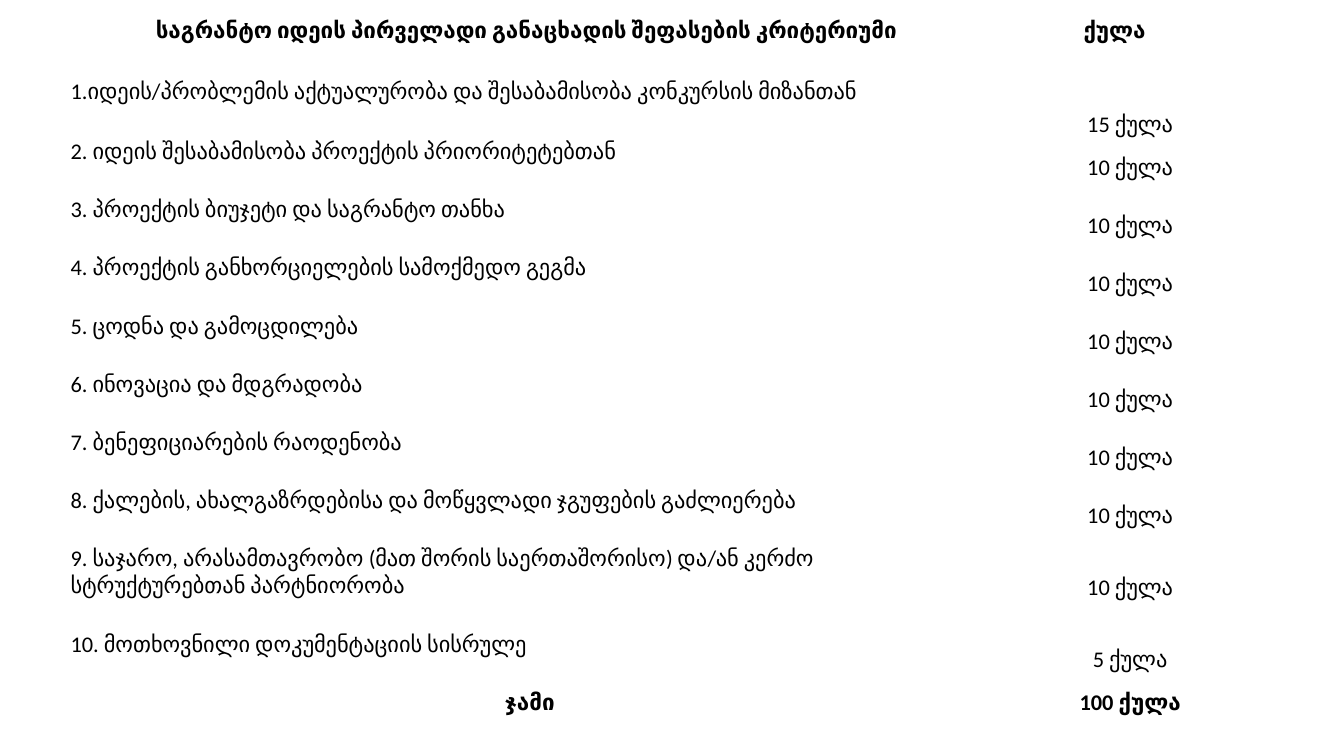
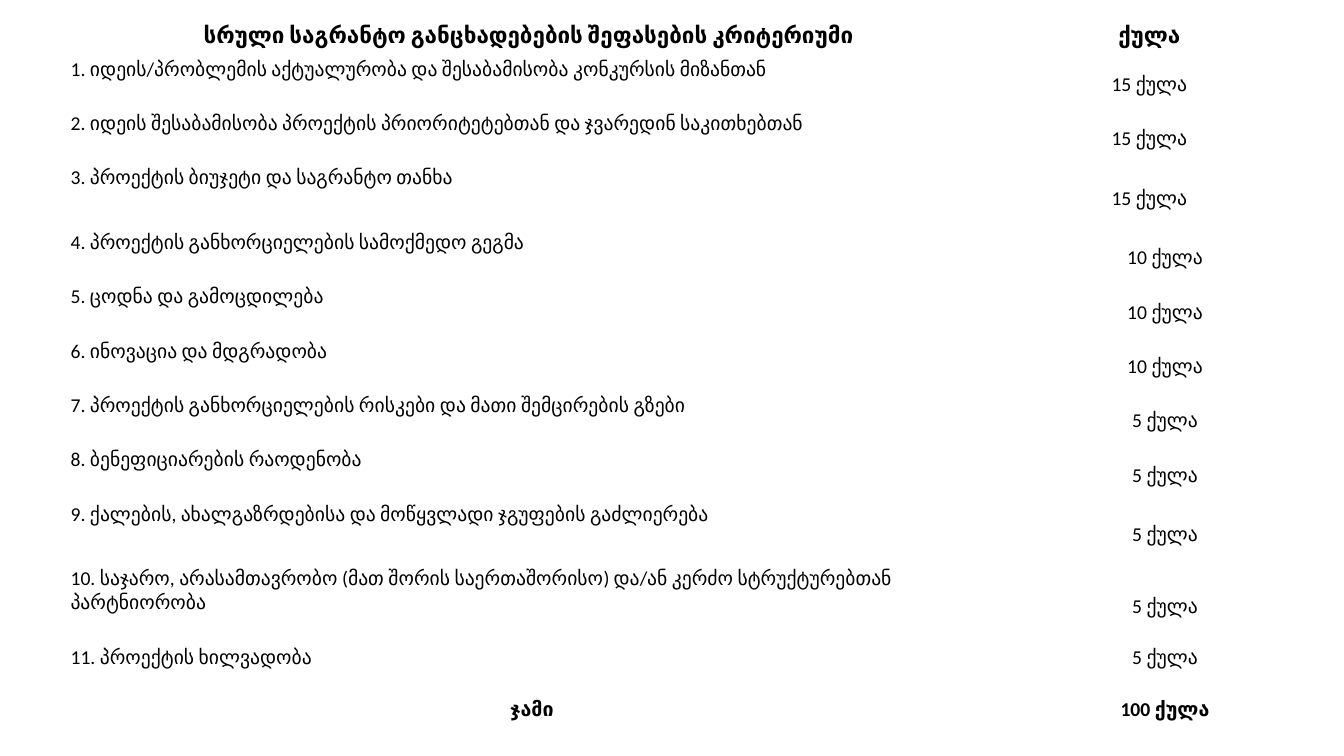
from pptx import Presentation
from pptx.dml.color import RGBColor
from pptx.enum.text import MSO_ANCHOR as Anchor, PP_ALIGN as Align
from pptx.util import Inches, Pt


def color(value):
    return RGBColor.from_string(value)


class ScoreDeck:
    GRID = 100
    BASE_FONT = {"name": "Calibri", "bold": False}
    INK = "000000"
    PAPER = "FFFFFF"
    SIDE_INSET = Inches(0.07)
    SCORE_INDENT = Inches(0.31)
    TOTAL_INDENT = Inches(0.06)

    def __init__(self):
        self.deck = Presentation()
        self.deck.slide_width = Inches(13.33)
        self.deck.slide_height = Inches(7.5)
        self.page = None

    def columns(self, count):
        return round(self.deck.slide_width * count / self.GRID)

    def rows(self, count):
        return round(self.deck.slide_height * count / self.GRID)

    def add_page(self):
        self.page = self.deck.slides.add_slide(self.deck.slide_layouts[6])
        fill = self.page.background.fill
        fill.solid()
        fill.fore_color.rgb = color(self.PAPER)

    def set_cell(self, cell, text, size, align=Align.CENTER, anchor=Anchor.TOP,
                 indent=0, **font):
        cell.fill.background()
        layout = {
            "margin_left": self.SIDE_INSET,
            "margin_right": self.SIDE_INSET,
            "margin_top": 0,
            "margin_bottom": 0,
            "vertical_anchor": anchor,
        }
        for name, value in layout.items():
            setattr(cell, name, value)
        para = cell.text_frame.paragraphs[0]
        para.alignment = align
        if indent:
            para._p.get_or_add_pPr().set("marL", str(indent))
        span = para.add_run()
        span.text = text
        for name, value in {**self.BASE_FONT, "size": Pt(size), **font}.items():
            setattr(span.font, name, value)
        span.font.color.rgb = color(self.INK)

    def add_scores(self, heading, criteria, top, widths, heights, size,
                   centered=(), anchors=None):
        anchors = anchors or {}
        frame = self.page.shapes.add_table(
            len(heights), len(widths), self.columns(4.73), self.rows(top),
            self.columns(sum(widths)), self.rows(sum(heights)))
        table = frame.table
        table.first_row = table.horz_banding = False
        for column, width in zip(table.columns, widths):
            column.width = self.columns(width)
        for row, height in zip(table.rows, heights):
            row.height = self.rows(height)

        for index, text in enumerate((heading, "ქულა")):
            self.set_cell(table.cell(0, index), text, 16, bold=True)
        for number, (text, score) in enumerate(criteria, 1):
            self.set_cell(table.cell(number, 0), text, size, align=Align.LEFT)
            self.set_cell(table.cell(number, 1), f"{score} ქულა", size,
                          anchor=anchors.get(number, Anchor.MIDDLE),
                          indent=0 if number in centered else self.SCORE_INDENT)
        last = len(criteria) + 1
        total = sum(score for _, score in criteria)
        self.set_cell(table.cell(last, 0), "ჯამი", size,
                      indent=self.TOTAL_INDENT, bold=True)
        self.set_cell(table.cell(last, 1), f"{total} ქულა", size,
                      indent=self.SCORE_INDENT, bold=True)


IDEA_CRITERIA = [
    ("1.იდეის/პრობლემის აქტუალურობა და შესაბამისობა კონკურსის მიზანთან", 15),
    ("2. იდეის შესაბამისობა პროექტის პრიორიტეტებთან", 10),
    ("3. პროექტის ბიუჯეტი და საგრანტო თანხა", 10),
    ("4. პროექტის განხორციელების სამოქმედო გეგმა", 10),
    ("5. ცოდნა და გამოცდილება", 10),
    ("6. ინოვაცია და მდგრადობა", 10),
    ("7. ბენეფიციარების რაოდენობა", 10),
    ("8. ქალების, ახალგაზრდებისა და მოწყვლადი ჯგუფების გაძლიერება", 10),
    ("9. საჯარო, არასამთავრობო (მათ შორის საერთაშორისო) და/ან კერძო "
     "სტრუქტურებთან პარტნიორობა", 10),
    ("10. მოთხოვნილი დოკუმენტაციის სისრულე", 5),
]

FULL_CRITERIA = [
    ("1. იდეის/პრობლემის აქტუალურობა და შესაბამისობა კონკურსის მიზანთან", 15),
    ("2. იდეის შესაბამისობა პროექტის პრიორიტეტებთან და ჯვარედინ საკითხებთან", 15),
    ("3. პროექტის ბიუჯეტი და საგრანტო თანხა", 15),
    ("4. პროექტის განხორციელების სამოქმედო გეგმა", 10),
    ("5. ცოდნა და გამოცდილება", 10),
    ("6. ინოვაცია და მდგრადობა", 10),
    ("7. პროექტის განხორციელების რისკები და მათი შემცირების გზები", 5),
    ("8. ბენეფიციარების რაოდენობა", 5),
    ("9. ქალების, ახალგაზრდებისა და მოწყვლადი ჯგუფების გაძლიერება", 5),
    ("10. საჯარო, არასამთავრობო (მათ შორის საერთაშორისო) და/ან კერძო "
     "სტრუქტურებთან პარტნიორობა", 5),
    ("11. პროექტის ხილვადობა", 5),
]


def main():
    scores = ScoreDeck()
    scores.add_page()
    scores.add_scores(
        "საგრანტო იდეის პირველადი განაცხადის შეფასების კრიტერიუმი",
        IDEA_CRITERIA, top=2.27, widths=(68.94, 18.53),
        heights=[8.13, 7.93] + [7.68] * 7 + [11.4, 7.68, 7.6],
        size=16, anchors={1: Anchor.BOTTOM})
    scores.add_page()
    scores.add_scores(
        "სრული საგრანტო განცხადებების შეფასების კრიტერიუმი",
        FULL_CRITERIA, top=2.93, widths=(69.24, 23.1),
        heights=[4.67, 7.2, 7.2, 8.53] + [7.2] * 5 + [8.53, 10.4, 6.87, 6.7],
        size=14, centered=(1, 2, 3), anchors={11: Anchor.TOP})
    scores.deck.save("out.pptx")


if __name__ == "__main__":
    main()
